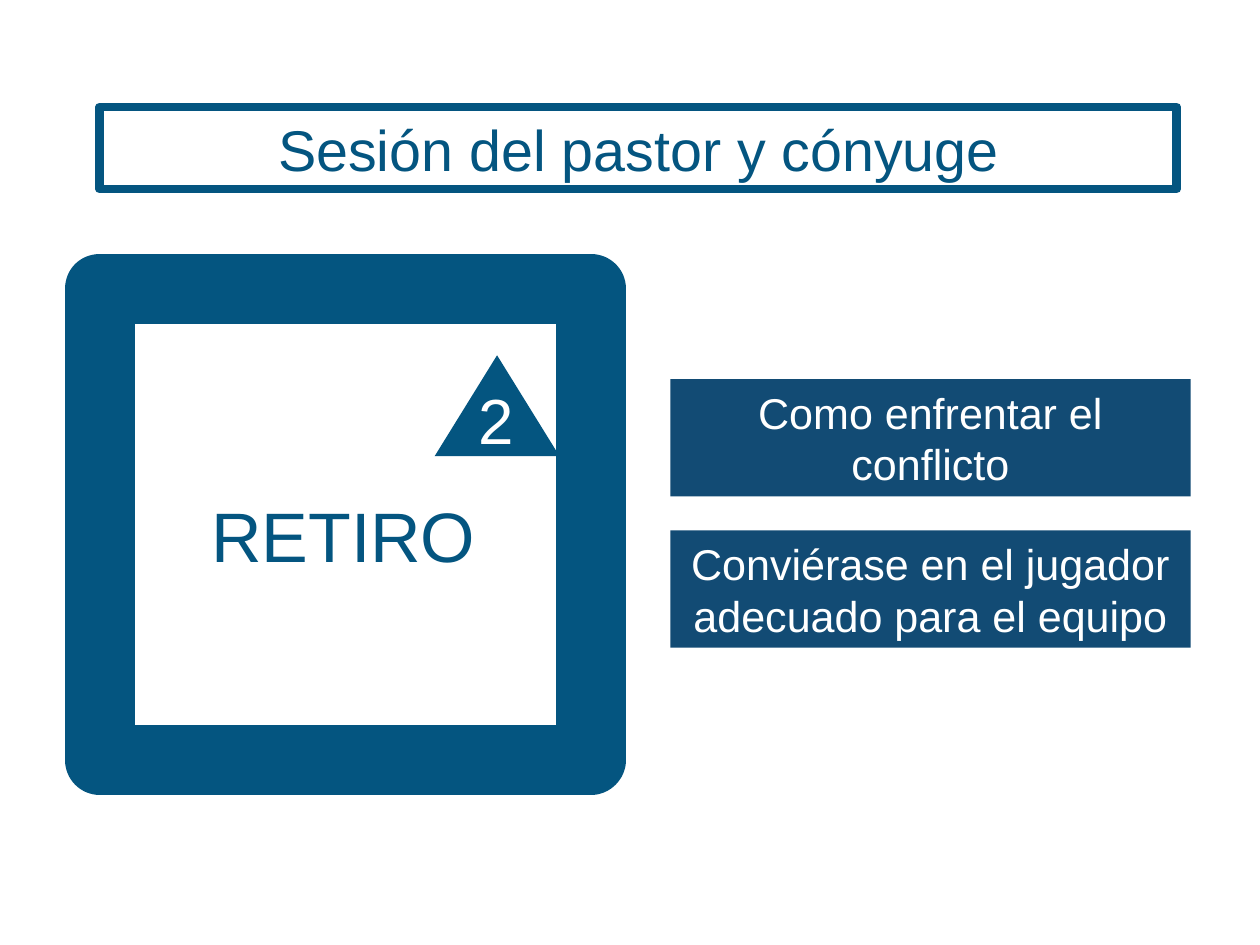
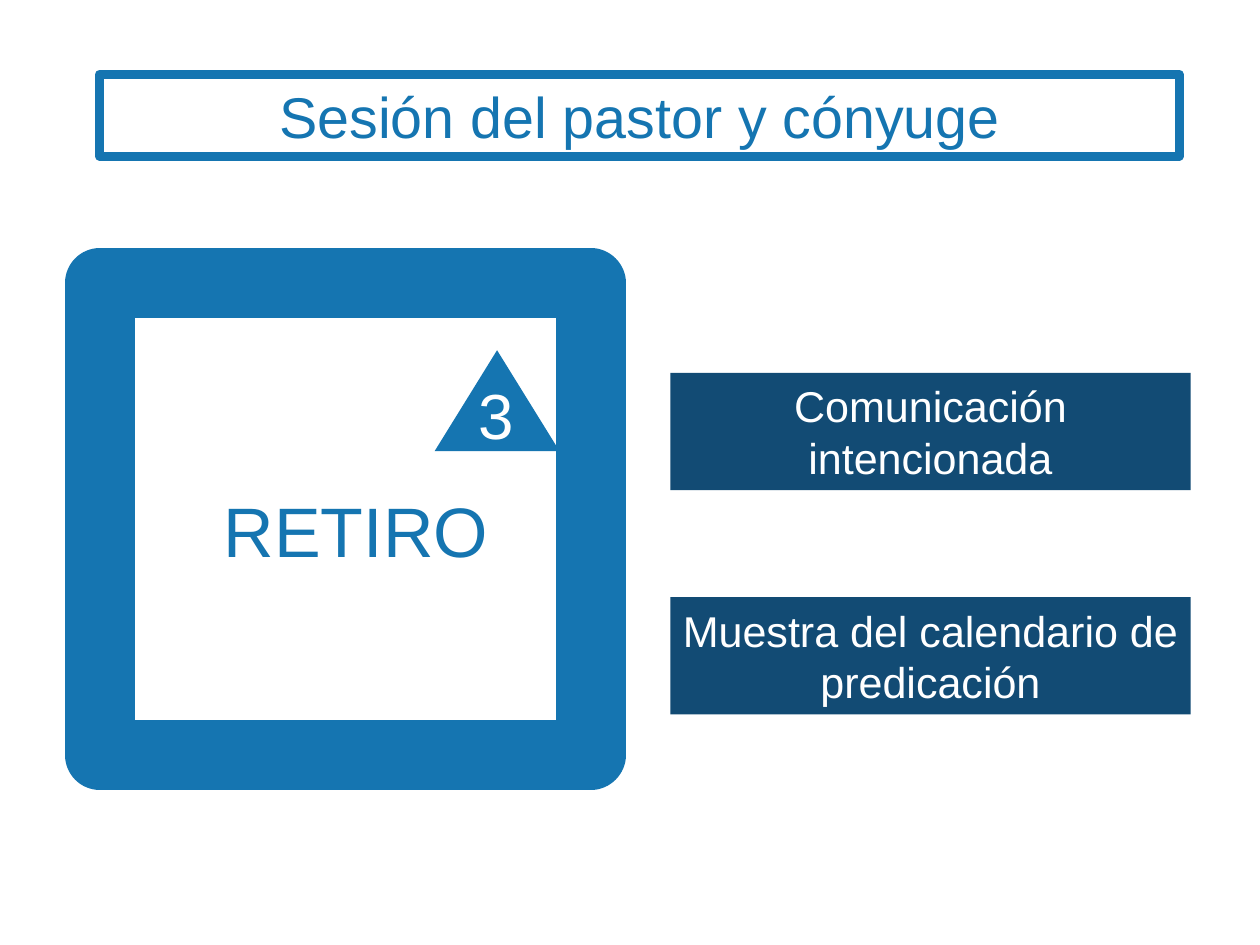
import pptx
import pptx.util
import pptx.dml.color
import pptx.enum.shapes
import pptx.enum.text
from lxml import etree
from pptx.util import Inches

COLORS = {"white": "FFFFFF", "topic": "124B74", "dark": "045580", "bright": "1575B1"}
FONT = "Arial"
TITLE = "Sesión del pastor y cónyuge"
SHAPES = pptx.enum.shapes.MSO_SHAPE
ALIGN = pptx.enum.text.PP_ALIGN
ANCHOR = pptx.enum.text.MSO_ANCHOR


def add_block(slide, kind, box, fill=None, line=None, line_width=0):
    shape = slide.shapes.add_shape(kind, *[Inches(length) for length in box])
    shape.shadow.inherit = False
    if fill:
        shape.fill.solid()
        shape.fill.fore_color.rgb = pptx.dml.color.RGBColor.from_string(COLORS[fill])
    else:
        shape.fill.background()
    if line:
        shape.line.color.rgb = pptx.dml.color.RGBColor.from_string(COLORS[line])
        shape.line.width = pptx.util.Pt(line_width)
        etree.SubElement(shape.line._ln, pptx.oxml.ns.qn("a:round"))
    else:
        shape.line.fill.background()
    return shape


def write_text(shape, text, size, color, align=ALIGN.CENTER, anchor=ANCHOR.MIDDLE):
    text_frame = shape.text_frame
    text_frame.text = text
    text_frame.word_wrap = True
    text_frame.vertical_anchor = anchor
    text_frame.margin_left = text_frame.margin_right = Inches(0.09)
    paragraph = text_frame.paragraphs[0]
    paragraph.alignment = align
    font = paragraph.runs[0].font
    font.name = FONT
    font.size = pptx.util.Pt(size)
    font.color.rgb = pptx.dml.color.RGBColor.from_string(COLORS[color])


sessions = [
    {
        "accent": "dark", "number": "2", "title_top": 0.85, "title_width": 8.55,
        "frame_top": 2.29, "label_width": 2.85,
        "topics": [
            (3.01, "Como enfrentar el conflicto"),
            (4.21, "Conviérase en el jugador adecuado para el equipo"),
        ],
    },
    {
        "accent": "bright", "number": "3", "title_top": 0.59, "title_width": 8.57,
        "frame_top": 2.25, "label_width": 3.05,
        "topics": [
            (2.96, "Comunicación intencionada"),
            (4.74, "Muestra del calendario de predicación"),
        ],
    },
]

presentation = pptx.Presentation()
presentation.slide_width = Inches(10)
presentation.slide_height = Inches(7.5)

for session in sessions:
    slide = presentation.slides.add_slide(presentation.slide_layouts[6])
    accent = session["accent"]
    frame_top = session["frame_top"]

    add_block(slide, SHAPES.RECTANGLE, (0.79, frame_top, 3.9, 3.74), line=accent, line_width=40)

    label = slide.shapes.add_textbox(
        Inches(1.3), Inches(frame_top + 1.57), Inches(session["label_width"]), Inches(0.77))
    write_text(label, "RETIRO", 40, accent, anchor=ANCHOR.TOP)

    add_block(slide, SHAPES.ISOSCELES_TRIANGLE, (3.45, frame_top + 0.53, 0.99, 0.8), fill=accent)
    number = slide.shapes.add_textbox(
        Inches(3.71), Inches(frame_top + 0.68), Inches(0.61), Inches(0.71))
    write_text(number, session["number"], 36.4, "white", ALIGN.LEFT, ANCHOR.TOP)

    title_box = (0.79, session["title_top"], session["title_width"], 0.65)
    title = add_block(slide, SHAPES.RECTANGLE, title_box, "white", accent, 5)
    write_text(title, TITLE, 32.8, accent)

    for topic_top, topic_text in session["topics"]:
        topic = add_block(slide, SHAPES.RECTANGLE, (5.32, topic_top, 4.13, 0.93), fill="topic")
        write_text(topic, topic_text, 24.6, "white")

presentation.save("out.pptx")
